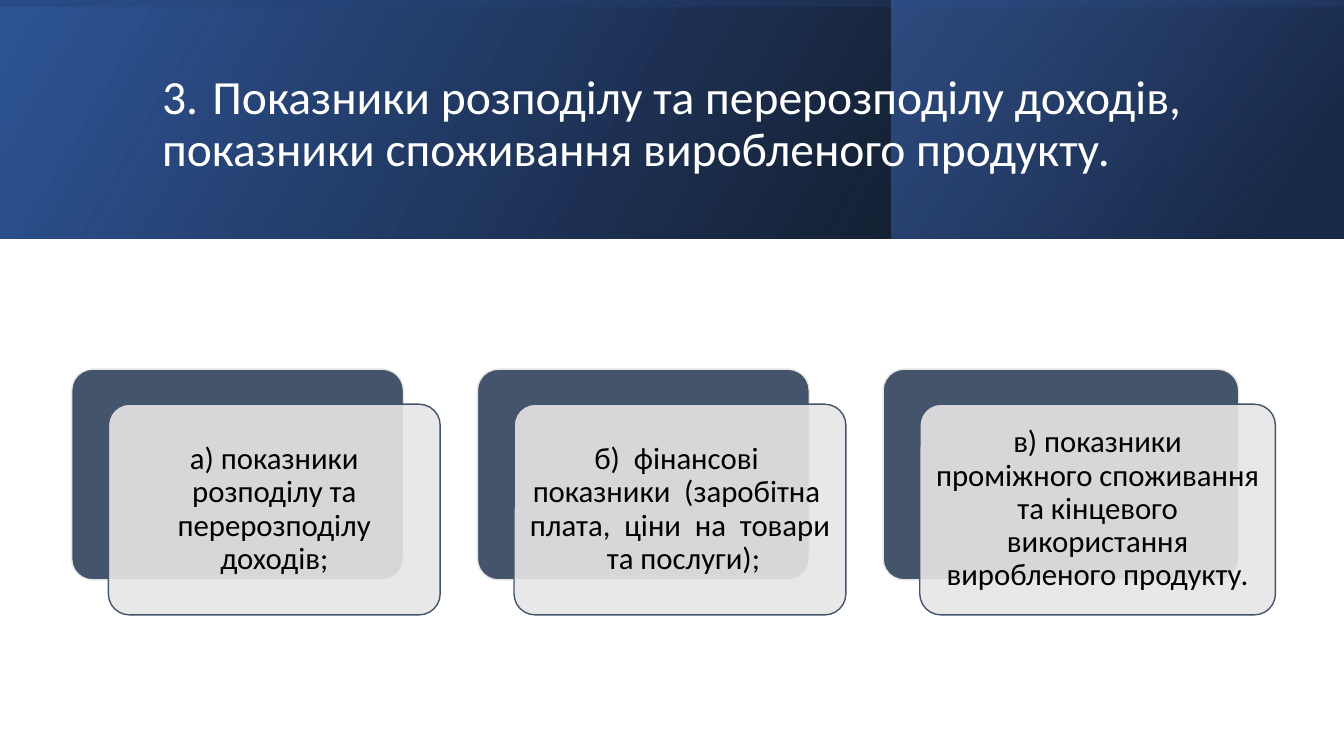
from dataclasses import dataclass

from lxml.etree import SubElement
from pptx import Presentation
from pptx.dml.color import RGBColor
from pptx.enum.shapes import MSO_SHAPE
from pptx.enum.text import MSO_ANCHOR, PP_ALIGN
from pptx.oxml.ns import qn
from pptx.util import Pt


@dataclass(frozen=True)
class Theme:
    font: str = "Calibri"
    title_size: float = 34
    card_size: float = 22
    white: str = "FFFFFF"
    black: str = "000000"
    slate: str = "44546A"
    mist: str = "E7E6E6"
    blue: str = "2F5597"
    navy: str = "203864"
    sky: str = "4472C4"


THEME = Theme()
PAGE_WIDTH, PAGE_HEIGHT = 960, 540
BANNER_HEIGHT = 170.6

TITLE = ("3.\tПоказники розподілу та перерозподілу доходів, "
         "показники споживання виробленого продукту.")
# Card text and panel width
CARDS = [
    ("а) показники розподілу та перерозподілу доходів;", 237),
    ("б)  фінансові  показники  (заробітна  плата,  ціни  на  товари  та послуги);", 237),
    ("в) показники проміжного споживання та кінцевого використання "
     "виробленого продукту.", 254),
]


def set_alpha(color_element, percent):
    SubElement(color_element, qn("a:alpha")).set("val", str(percent * 1000))


def add_panel(shapes, kind, box):
    panel = shapes.add_shape(kind, *(Pt(length) for length in box))
    panel.shadow.inherit = False
    return panel


def add_gradient_panel(page, box, stops, angle, rotation=0):
    """Mirrored rectangle; each stop is position, colour, opacity in percent."""
    panel = add_panel(page.shapes, MSO_SHAPE.RECTANGLE, box)
    panel.line.fill.background()
    panel.rotation = rotation
    panel.fill.gradient()
    properties = panel.element.spPr
    properties.find(qn("a:xfrm")).set("flipH", "1")
    gradient = properties.find(qn("a:gradFill"))
    for child in list(gradient):
        gradient.remove(child)
    stop_list = SubElement(gradient, qn("a:gsLst"))
    for position, color, opacity in stops:
        stop = SubElement(stop_list, qn("a:gs"), pos=str(position * 1000))
        set_alpha(SubElement(stop, qn("a:srgbClr"), val=color), opacity)
    SubElement(gradient, qn("a:lin"), ang=str(angle * 60000), scaled="0")


def write_text(frame, text, size, color, align):
    frame.word_wrap = True
    frame.vertical_anchor = MSO_ANCHOR.MIDDLE
    para = frame.paragraphs[0]
    para.alignment = align
    para.line_spacing = 0.9
    span = para.add_run()
    span.text = text
    span.font.name = THEME.font
    span.font.size = Pt(size)
    span.font.color.rgb = RGBColor.from_string(color)
    return para


def add_banner(page, left, top, width, height):
    # Layered gradients
    add_gradient_panel(page, (left, top, width, height),
                       [(0, THEME.black, 96), (100, THEME.blue, 100)], 330)
    accent = 323
    add_gradient_panel(page, (left + width - accent, top, accent, height),
                       [(19, THEME.navy, 68), (100, THEME.sky, 48)], 320)
    # Upright panel turned on its side to cover the whole banner
    shift = (width - height) / 2
    add_gradient_panel(page, (left + shift, top - shift, height, width),
                       [(23, THEME.blue, 16), (99, THEME.black, 45)], 350, 270)
    # Title
    title = page.shapes.add_textbox(Pt(left + 108.7), Pt(top + 27.4),
                                    Pt(765.4), Pt(123.8))
    write_text(title.text_frame, TITLE, THEME.title_size, THEME.white, PP_ALIGN.LEFT)


def add_card(page, left, top, width, height, offset, text):
    """Dark panel with a translucent text panel shifted down and right."""
    group = page.shapes.add_group_shape()
    back_box = (left, top, width, height)
    front_box = (left + offset[0], top + offset[1], width, height)
    for box, fill, line in ((back_box, THEME.slate, THEME.mist),
                            (front_box, THEME.mist, THEME.slate)):
        panel = add_panel(group.shapes, MSO_SHAPE.ROUNDED_RECTANGLE, box)
        panel.adjustments[0] = 0.1
        panel.fill.solid()
        panel.fill.fore_color.rgb = RGBColor.from_string(fill)
        panel.line.color.rgb = RGBColor.from_string(line)
        panel.line.width = Pt(1)
    # The last panel is the front one
    set_alpha(panel.element.spPr.find(qn("a:solidFill"))[0], 90)
    frame = panel.text_frame
    frame.margin_left = frame.margin_right = Pt(6.6)
    frame.margin_top = frame.margin_bottom = Pt(6.6)
    para = write_text(frame, text, THEME.card_size, THEME.black, PP_ALIGN.CENTER)
    para.space_after = Pt(7.7)


def add_card_row(page, left, top, height):
    offset, gap = (26.2, 25), 26.6
    for text, width in CARDS:
        add_card(page, left, top, width, height, offset, text)
        left += width + offset[0] + gap


def main():
    deck = Presentation()
    deck.slide_width, deck.slide_height = Pt(PAGE_WIDTH), Pt(PAGE_HEIGHT)
    page = deck.slides.add_slide(deck.slide_layouts[6])
    add_banner(page, 0, 0, PAGE_WIDTH, BANNER_HEIGHT)
    add_card_row(page, 51.2, 263.7, 150.5)
    deck.save("out.pptx")


if __name__ == "__main__":
    main()
